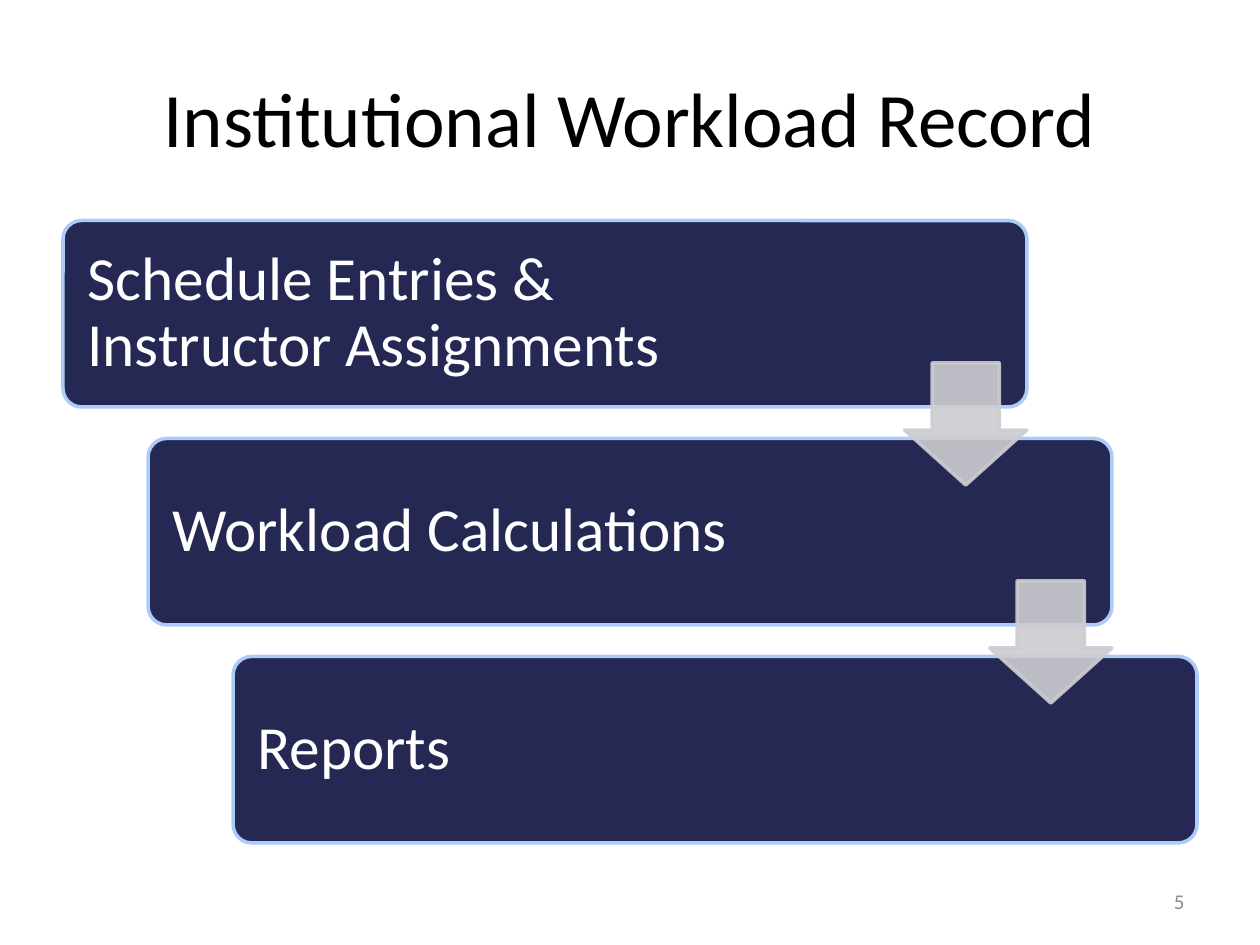
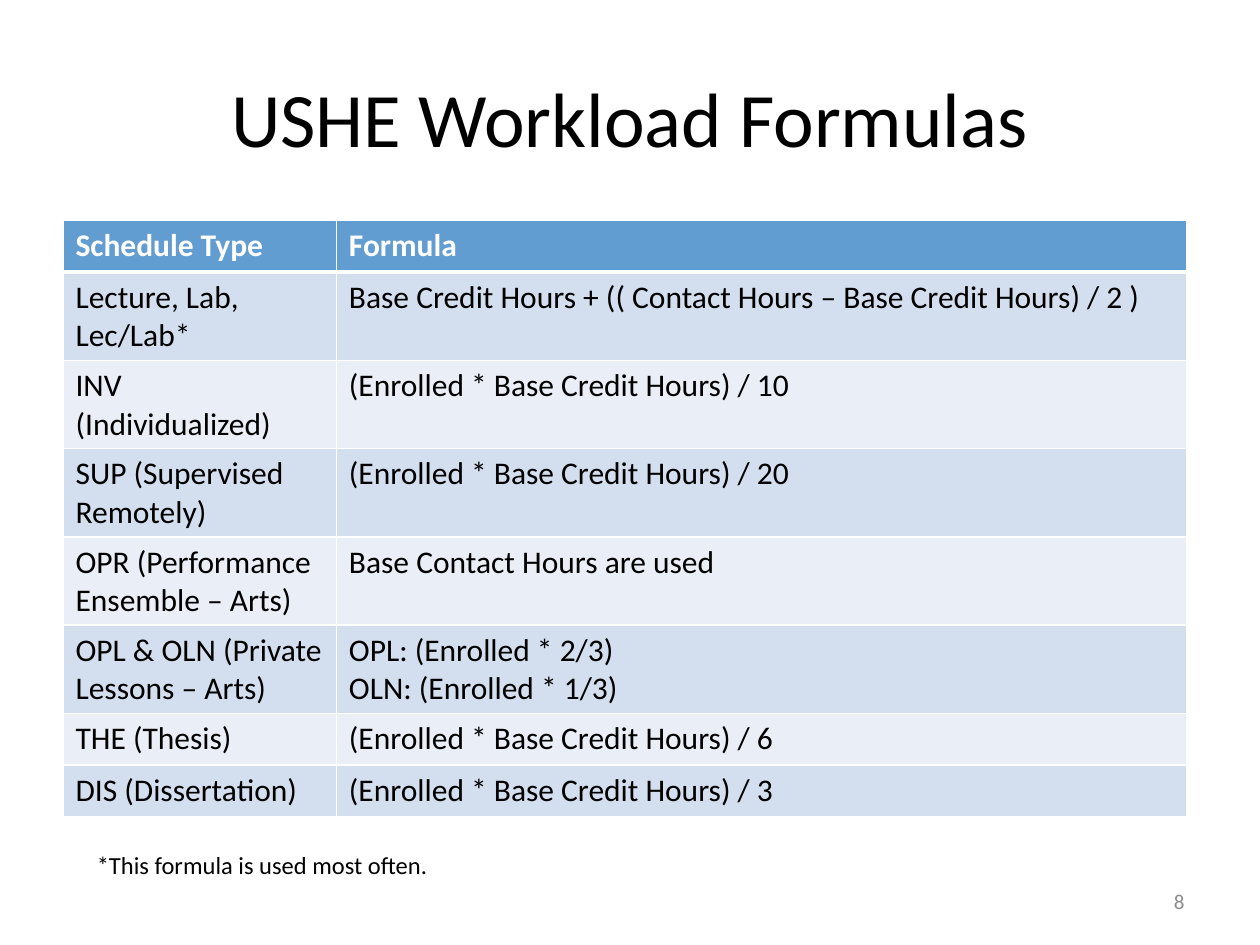
"""Build two slides on workload records: a three-step flow and a table of formulas."""
from dataclasses import dataclass
from typing import NamedTuple

from lxml.etree import SubElement
from pptx import Presentation
from pptx.dml.color import RGBColor
from pptx.enum.shapes import MSO_SHAPE as Preset
from pptx.enum.text import MSO_ANCHOR as Anchor, PP_ALIGN as Align
from pptx.oxml.ns import qn
from pptx.presentation import Presentation as Deck
from pptx.shapes.autoshape import Shape
from pptx.slide import Slide
from pptx.table import _Cell as Cell
from pptx.text.text import TextFrame
from pptx.util import Inches, Pt


@dataclass(frozen=True)
class Theme:
    font: str = "Calibri"
    ink: str = "000000"
    paper: str = "FFFFFF"
    number: str = "8C8C8C"
    step: str = "242852"
    step_edge: str = "ACCBF9"
    arrow: str = "CDCDD1"
    header: str = "629DD1"
    bands: tuple[str, str] = ("D3DFEE", "EAEFF7")
    title_size: float = 44
    step_size: float = 35
    table_size: float = 18
    note_size: float = 14
    number_size: float = 12
    outline: float = 2
    arrow_opacity: int = 90


class Box(NamedTuple):
    left: float
    top: float
    width: float
    height: float

    def shifted(self, across: float, down: float, times: int) -> "Box":
        return self._replace(left=self.left + across * times, top=self.top + down * times)

    def lengths(self) -> list[int]:
        return [Inches(value) for value in self]


class FormulaRow(NamedTuple):
    schedule_type: str
    formula: str


THEME = Theme()
TITLE_BOX = Box(0.5, 0.3, 9, 1.25)
NUMBER_BOX = Box(7.17, 6.95, 2.33, 0.4)
NOTE_BOX = Box(0.67, 6.7, 8.5, 0.34)
FIRST_STEP = Box(0.5, 1.75, 7.65, 1.48)
FIRST_ARROW = Box(7.18, 2.88, 0.97, 0.97)
STEP_ACROSS, STEP_DOWN = 0.675, 1.73
STEP_INSET, STEP_RIGHT_INSET = 0.15, 1.8
COLUMN_WIDTHS = (2.17, 6.75)
ROW_HEIGHT = 0.41
HEADER_RULE, CELL_RULE = 3, 1

STEPS = ("Schedule Entries & Instructor Assignments", "Workload Calculations", "Reports")
FORMULAS = (
    FormulaRow("Schedule Type", "Formula"),
    FormulaRow("Lecture, Lab, Lec/Lab*", "Base Credit Hours + (( Contact Hours – Base Credit Hours) / 2 )"),
    FormulaRow("INV (Individualized)", "(Enrolled * Base Credit Hours) / 10"),
    FormulaRow("SUP (Supervised Remotely)", "(Enrolled * Base Credit Hours) / 20"),
    FormulaRow("OPR (Performance Ensemble – Arts)", "Base Contact Hours are used"),
    FormulaRow("OPL & OLN (Private Lessons – Arts)", "OPL: (Enrolled * 2/3)\nOLN: (Enrolled * 1/3)"),
    FormulaRow("THE (Thesis)", "(Enrolled * Base Credit Hours) / 6"),
    FormulaRow("DIS (Dissertation)", "(Enrolled * Base Credit Hours) / 3"),
)


def write(frame: TextFrame, wording: str, size: float, color: str,
          align: Align = Align.LEFT, bold: bool = False) -> None:
    frame.text = wording
    frame.word_wrap = True
    for paragraph in frame.paragraphs:
        paragraph.alignment = align
        for run in paragraph.runs:
            run.font.name = THEME.font
            run.font.size = Pt(size)
            run.font.bold = bold
            run.font.color.rgb = RGBColor.from_string(color)


def add_text(slide: Slide, box: Box, wording: str, size: float, color: str,
             align: Align = Align.LEFT, anchor: Anchor = Anchor.TOP) -> None:
    frame = slide.shapes.add_textbox(*box.lengths()).text_frame
    write(frame, wording, size, color, align)
    frame.vertical_anchor = anchor


def add_titled_slide(deck: Deck, heading: str, number: int) -> Slide:
    slide = deck.slides.add_slide(deck.slide_layouts.get_by_name("Title Only"))
    title = slide.shapes.title
    title.left, title.top, title.width, title.height = TITLE_BOX.lengths()
    write(title.text_frame, heading, THEME.title_size, THEME.ink, Align.CENTER)
    title.text_frame.vertical_anchor = Anchor.MIDDLE
    add_text(slide, NUMBER_BOX, str(number), THEME.number_size, THEME.number,
             Align.RIGHT, Anchor.MIDDLE)
    return slide


def add_preset(slide: Slide, preset: Preset, box: Box, fill: str, edge: str,
               adjustments: tuple[float, ...]) -> Shape:
    shape = slide.shapes.add_shape(preset, *box.lengths())
    shape.shadow.inherit = False
    shape.fill.solid()
    shape.fill.fore_color.rgb = RGBColor.from_string(fill)
    shape.line.color.rgb = RGBColor.from_string(edge)
    shape.line.width = Pt(THEME.outline)
    for index, value in enumerate(adjustments):
        shape.adjustments[index] = value
    return shape


def add_step(slide: Slide, box: Box, wording: str) -> None:
    step = add_preset(slide, Preset.ROUNDED_RECTANGLE, box, THEME.step, THEME.step_edge, (0.1,))
    frame = step.text_frame
    write(frame, wording, THEME.step_size, THEME.paper)
    frame.vertical_anchor = Anchor.MIDDLE
    frame.margin_left = frame.margin_top = frame.margin_bottom = Inches(STEP_INSET)
    frame.margin_right = Inches(STEP_RIGHT_INSET)
    frame.paragraphs[0].line_spacing = 0.9


def add_arrow(slide: Slide, box: Box) -> None:
    arrow = add_preset(slide, Preset.DOWN_ARROW, box, THEME.arrow, THEME.arrow, (0.55, 0.45))
    for color in arrow.element.spPr.iter(qn("a:srgbClr")):
        SubElement(color, qn("a:alpha"), val=str(THEME.arrow_opacity * 1000))


def style_cell(cell: Cell, wording: str, row: int) -> None:
    is_header = row == 0
    write(cell.text_frame, wording, THEME.table_size,
          THEME.paper if is_header else THEME.ink, bold=is_header)
    rules = {"L": CELL_RULE, "R": CELL_RULE,
             "T": HEADER_RULE if row == 1 else CELL_RULE,
             "B": HEADER_RULE if is_header else CELL_RULE}
    properties = cell._tc.get_or_add_tcPr()
    for side, width in rules.items():
        rule = SubElement(properties, qn(f"a:ln{side}"), w=str(Pt(width)))
        SubElement(SubElement(rule, qn("a:solidFill")), qn("a:srgbClr"), val=THEME.paper)
    cell.fill.solid()
    cell.fill.fore_color.rgb = RGBColor.from_string(
        THEME.header if is_header else THEME.bands[(row - 1) % 2])


def add_formula_table(slide: Slide) -> None:
    box = Box(0.5, 1.75, sum(COLUMN_WIDTHS), ROW_HEIGHT * len(FORMULAS))
    table = slide.shapes.add_table(len(FORMULAS), len(COLUMN_WIDTHS), *box.lengths()).table
    for column, width in zip(table.columns, COLUMN_WIDTHS):
        column.width = Inches(width)
    for row, entry in enumerate(FORMULAS):
        for column, wording in enumerate(entry):
            style_cell(table.cell(row, column), wording, row)


def build_record_slide(deck: Deck) -> None:
    slide = add_titled_slide(deck, "Institutional Workload Record", 5)
    for index, wording in enumerate(STEPS):
        add_step(slide, FIRST_STEP.shifted(STEP_ACROSS, STEP_DOWN, index), wording)
    for index in range(len(STEPS) - 1):
        add_arrow(slide, FIRST_ARROW.shifted(STEP_ACROSS, STEP_DOWN, index))


def build_formula_slide(deck: Deck) -> None:
    slide = add_titled_slide(deck, "USHE Workload Formulas", 8)
    add_formula_table(slide)
    add_text(slide, NOTE_BOX, "*This formula is used most often.", THEME.note_size, THEME.ink)


def main() -> None:
    deck = Presentation()
    deck.slide_width, deck.slide_height = Inches(10), Inches(7.5)
    build_record_slide(deck)
    build_formula_slide(deck)
    deck.save("out.pptx")


if __name__ == "__main__":
    main()
